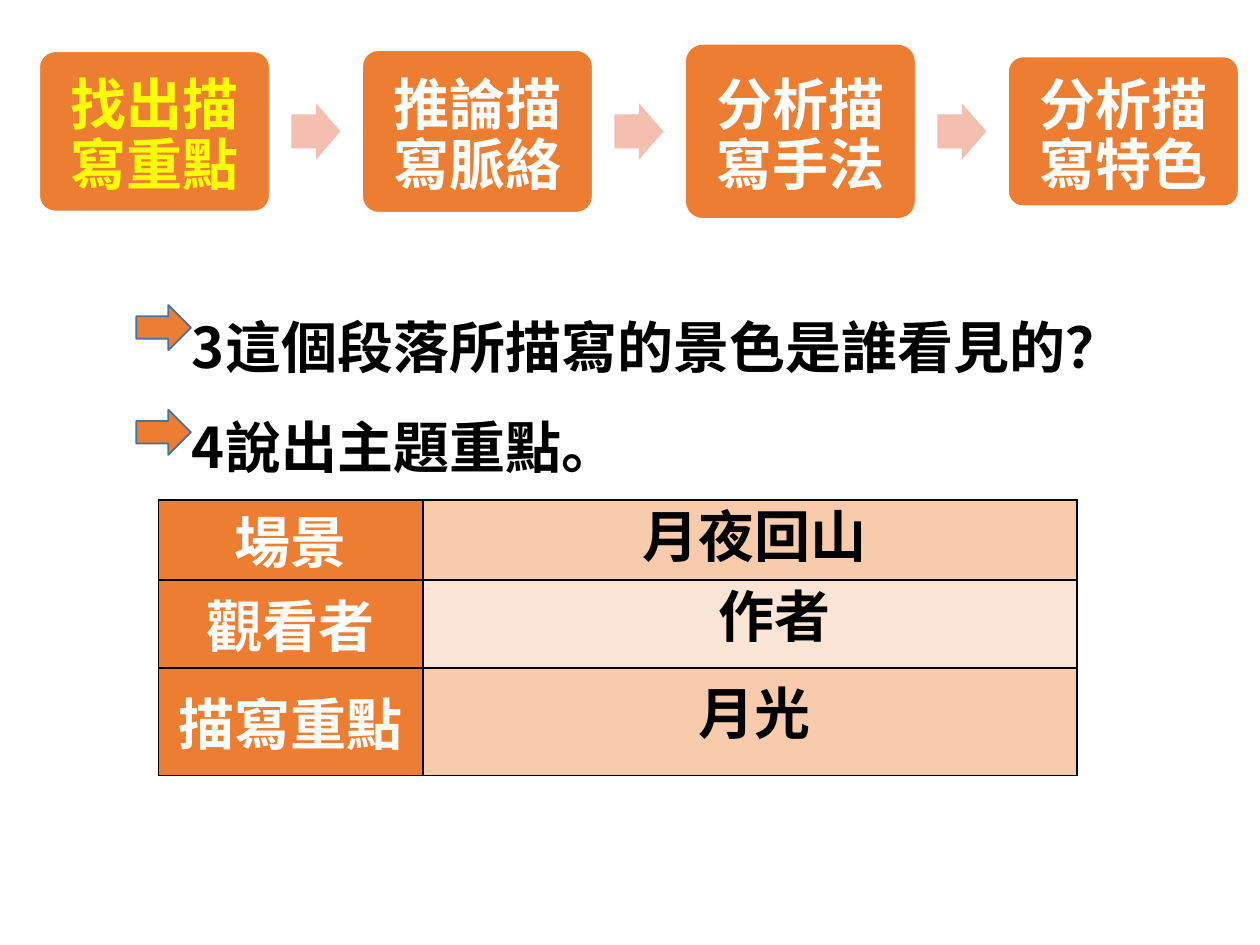
from lxml import etree
from pptx import Presentation
from pptx.dml.color import RGBColor
from pptx.enum import shapes, text
from pptx.oxml.ns import qn
from pptx.util import Cm, Pt

FONT = "Noto Sans CJK SC"
SIZE = 32
ORANGE = RGBColor(0xED, 0x7D, 0x31)
PINK = RGBColor(0xF4, 0xBF, 0xAE)
PEACH = RGBColor(0xF8, 0xCB, 0xAD)
CREAM = RGBColor(0xFB, 0xE5, 0xD6)
BLUE = RGBColor(0x43, 0x73, 0x9E)
YELLOW = RGBColor(0xFF, 0xFF, 0x00)
WHITE = RGBColor(0xFF, 0xFF, 0xFF)
BLACK = RGBColor(0, 0, 0)


def style(p, color, align=text.PP_ALIGN.CENTER, spacing=None):
    """Format a paragraph; spacing counts lines of 1.2 times the text size."""
    p.alignment = align
    if spacing:
        p.line_spacing = Pt(round(SIZE * 1.2 * spacing, 1))
    for r in p.runs:
        r.font.size = Pt(SIZE)
        r.font.bold = True
        r.font.name = FONT
        r.font.color.rgb = color
        ea = etree.SubElement(r._r.get_or_add_rPr(), qn("a:ea"))
        ea.set("typeface", FONT)


def add_block(slide, kind, x, y, w, h, fill, line=None):
    sp = slide.shapes.add_shape(kind, Cm(x), Cm(y), Cm(w), Cm(h))
    sp.shadow.inherit = False
    sp.fill.solid()
    sp.fill.fore_color.rgb = fill
    if line is None:
        sp.line.fill.background()
    else:
        sp.line.color.rgb = line
        sp.line.width = Pt(1)
    return sp


def add_label(slide, x, y, w, h):
    sp = slide.shapes.add_textbox(Cm(x), Cm(y), Cm(w), Cm(h))
    tf = sp.text_frame
    tf.word_wrap = True
    return tf


def add_steps(slide, x, middle, step_w, pitch, steps):
    """Row of step boxes on one middle line, with an arrow in each gap."""
    arrow_w, arrow_h = 0.99, 1.14
    for i, (label, h, color) in enumerate(steps):
        left = x + i * pitch
        if i:
            gap = pitch - step_w
            arrow = add_block(slide, shapes.MSO_SHAPE.RIGHT_ARROW,
                              left - (gap + arrow_w) / 2, middle - arrow_h / 2,
                              arrow_w, arrow_h, PINK)
            arrow.adjustments[0] = 0.6
        sp = add_block(slide, shapes.MSO_SHAPE.ROUNDED_RECTANGLE,
                       left, middle - h / 2, step_w, h, ORANGE, WHITE)
        sp.adjustments[0] = 0.1
        tf = sp.text_frame
        tf.word_wrap = True
        tf.vertical_anchor = text.MSO_ANCHOR.MIDDLE
        tf.margin_left = tf.margin_right = Cm(0.42)
        tf.margin_top, tf.margin_bottom = Cm(0.2), Cm(0)
        tf.text = label
        style(tf.paragraphs[0], color, spacing=0.9)


def add_questions(slide, x, y, w, h, questions):
    tf = add_label(slide, x, y, w, h)
    tf.text = "\n".join(questions)
    for i, p in enumerate(tf.paragraphs):
        p._p.get_or_add_pPr().set("marL", str(Cm(1)))
        style(p, BLACK, text.PP_ALIGN.LEFT, 1.5)
        add_block(slide, shapes.MSO_SHAPE.RIGHT_ARROW,
                  x + 0.13, y + 0.66 + i * 2.11, 1.1, 0.91, ORANGE, BLUE)


def add_borders(cell):
    tcPr = cell._tc.get_or_add_tcPr()
    for i, side in enumerate(("lnL", "lnR", "lnT", "lnB")):
        ln = etree.Element(qn("a:" + side), w=str(Pt(1)))
        fill = etree.SubElement(ln, qn("a:solidFill"))
        etree.SubElement(fill, qn("a:srgbClr"), val=str(BLACK))
        tcPr.insert(i, ln)


def add_summary(slide, x, y, widths, rows):
    """Table of headings, with each answer in a box over its right cell."""
    heights = [row[1] for row in rows]
    table = slide.shapes.add_table(len(rows), 2, Cm(x), Cm(y), Cm(sum(widths)),
                                   Cm(sum(heights))).table
    for column, w in zip(table.columns, widths):
        column.width = Cm(w)
    for i, (heading, h, fill, answer, dx, dy) in enumerate(rows):
        table.rows[i].height = Cm(h)
        for j, color in enumerate((ORANGE, fill)):
            cell = table.cell(i, j)
            cell.fill.solid()
            cell.fill.fore_color.rgb = color
            add_borders(cell)
        cell = table.cell(i, 0)
        cell.vertical_anchor = text.MSO_ANCHOR.MIDDLE
        cell.margin_top, cell.margin_bottom = Cm(0.25), Cm(0)
        cell.text = heading
        style(cell.text_frame.paragraphs[0], WHITE, spacing=1)

        tf = add_label(slide, x + dx, y + dy, 5.54, 1.63)
        tf.margin_top = tf.margin_bottom = 0
        tf.text = answer
        style(tf.paragraphs[0], BLACK)


def main():
    prs = Presentation()
    prs.slide_width, prs.slide_height = Cm(25.4), Cm(19.05)
    slide = prs.slides.add_slide(prs.slide_layouts[6])
    add_steps(slide, 0.79, 2.65, 4.65, 6.51, [
        ("找出描寫重點", 3.23, YELLOW),
        ("推論描寫脈絡", 3.28, WHITE),
        ("分析描寫手法", 3.53, WHITE),
        ("分析描寫特色", 3.02, WHITE),
    ])
    add_questions(slide, 2.62, 5.49, 20.2, 4.37,
                  ["3這個段落所描寫的景色是誰看見的？", "4說出主題重點。"])
    add_summary(slide, 3.2, 10.08, (5.33, 13.18), [
        ("場景", 1.61, PEACH, "月夜回山", 9.25, 0.03),
        ("觀看者", 1.78, CREAM, "作者", 9.65, 1.65),
        ("描寫重點", 2.16, PEACH, "月光", 9.25, 3.59),
    ])
    prs.save("out.pptx")


if __name__ == "__main__":
    main()
